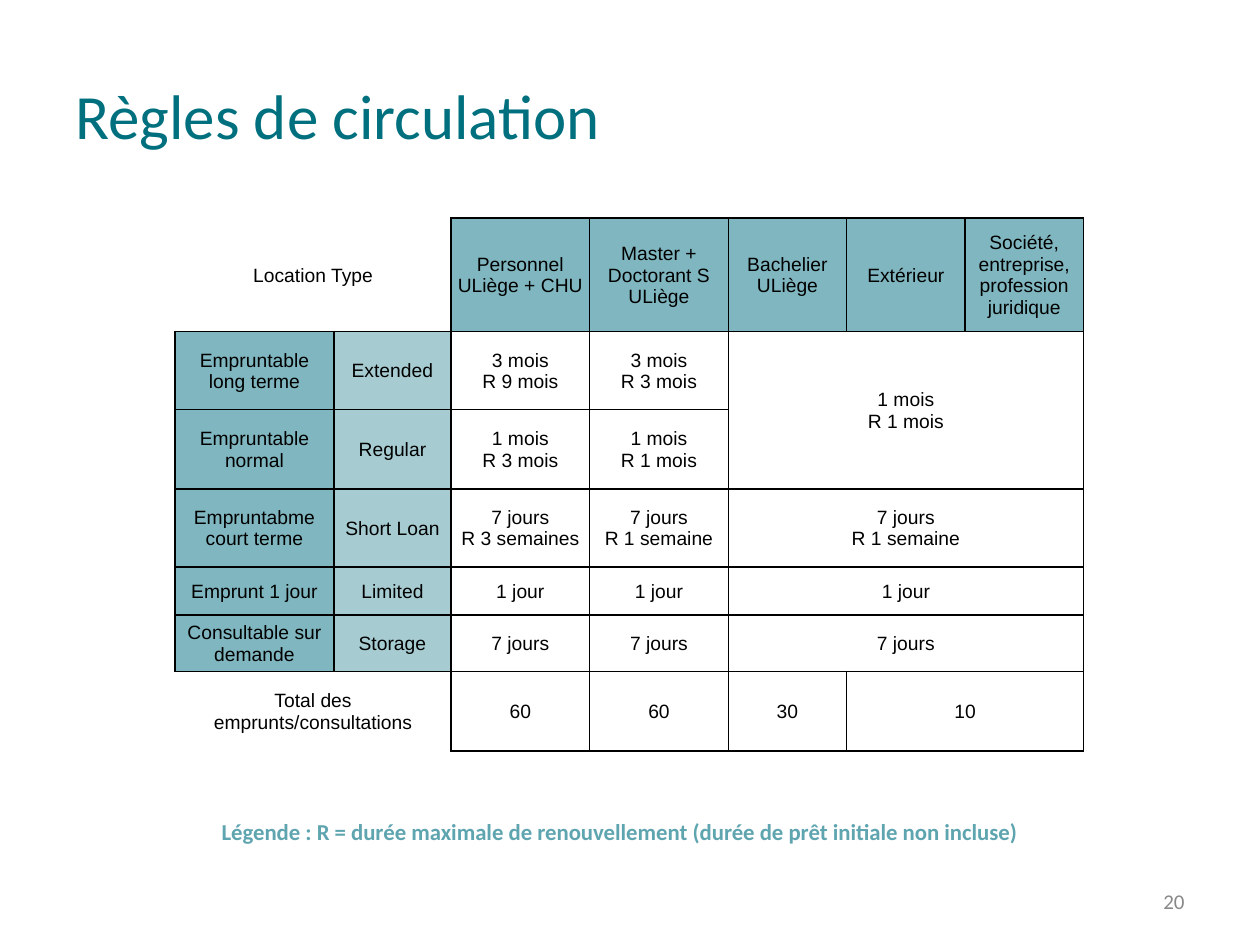
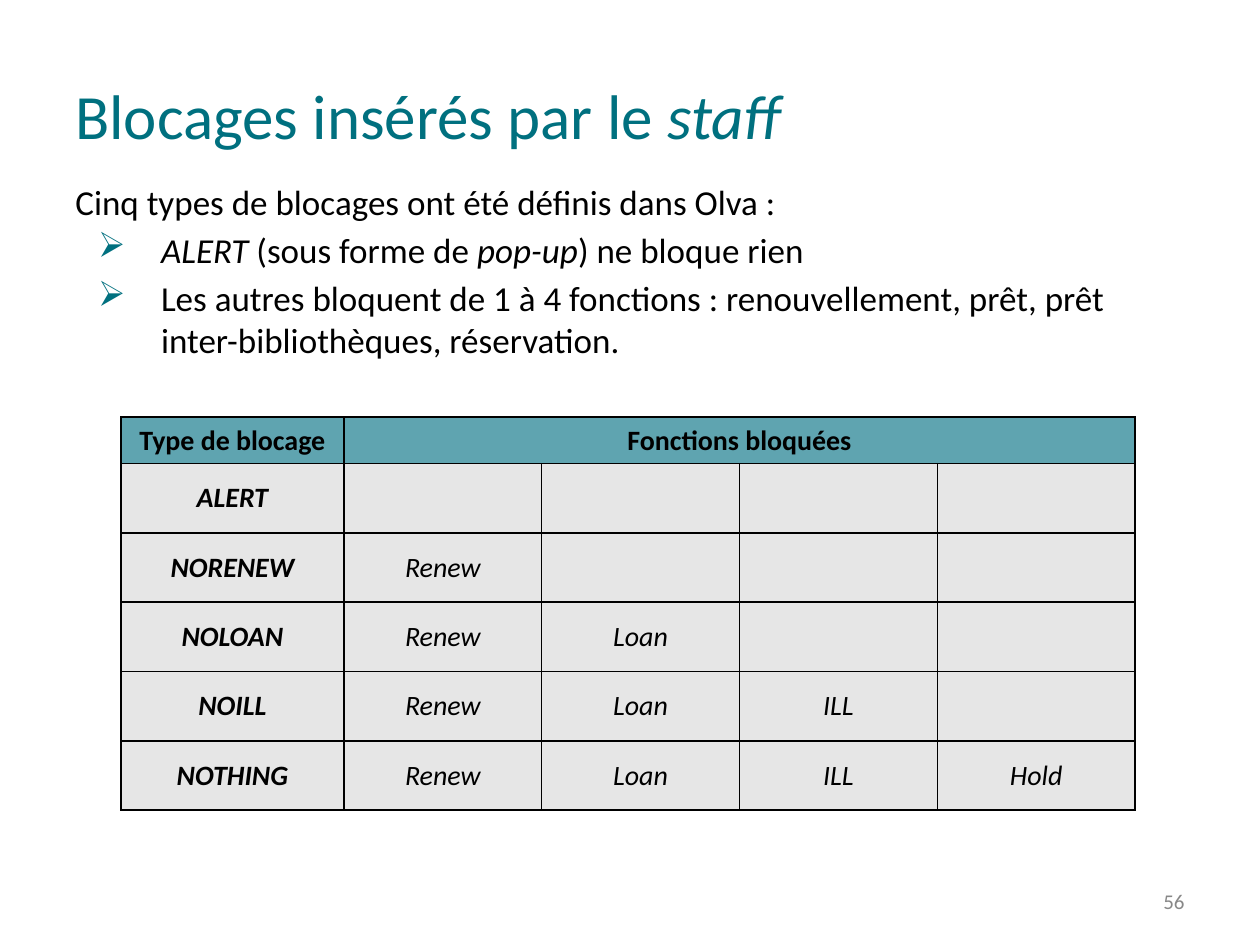
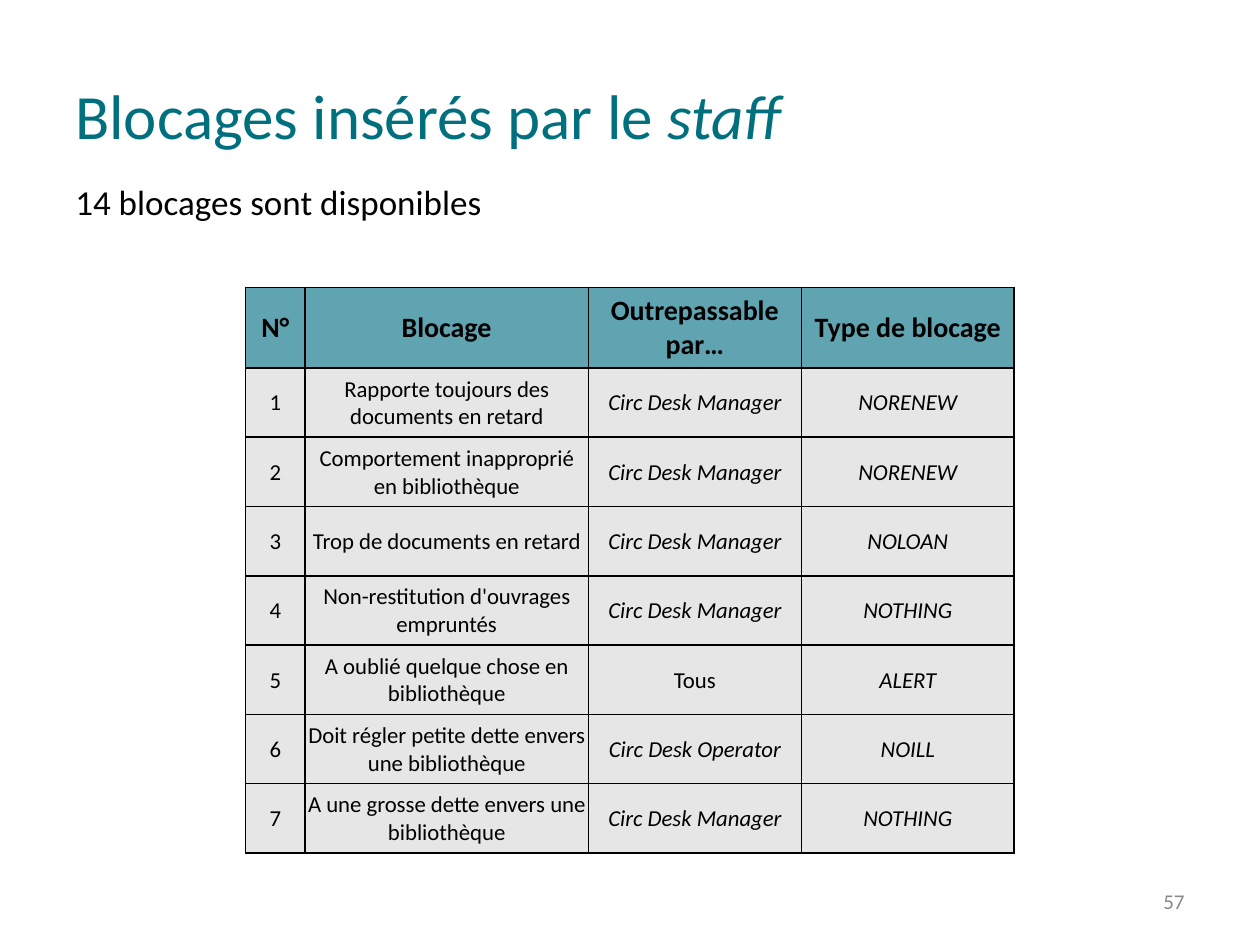
from lxml.etree import SubElement
from pptx import Presentation
from pptx.dml.color import RGBColor
from pptx.enum.text import MSO_ANCHOR, PP_ALIGN
from pptx.oxml.ns import qn
from pptx.util import Inches, Pt

COLORS = {
    "title": "00707F",
    "text": "000000",
    "number": "888888",
    "legend": "5FA5B0",
    "header": "5FA4B0",
    "body": "E6E6E6",
    "group": "7FB6BF",
    "type": "A6CCD2",
}
TITLE = {"size": Pt(36), "name": "Calibri"}
BODY = {"size": Pt(20), "name": "Calibri"}
NUMBER = {"size": Pt(12), "name": "Calibri"}
LEGEND = {"size": Pt(13), "name": "Calibri", "bold": True}
RULES = {"size": Pt(11), "name": "Arial"}
HEADING = {"size": Pt(16), "name": "Calibri", "bold": True}
FUNCTION = {"size": Pt(16), "name": "Calibri", "bold": False}
BLOCK = {"size": Pt(13), "name": "Calibri", "bold": False}

WIDE_INSETS = (0.1, 0.05, 0.1, 0.05)
TIGHT_INSETS = (0.01, 0.01, 0.01, 0)

STAFF_TITLE = "Blocages insérés par le *staff*"
TITLE_BOX = (0.5, 0.57, 9, 0.68)
BODY_BOX = (0.5, 1.38, 9, 5.32)
NUMBER_BOX = (7.17, 6.95, 2.33, 0.4)

CIRCULATION = [
    ["Location Type", None, "Personnel\nULiège + CHU", "Master +\nDoctorant S\nULiège",
     "Bachelier\nULiège", "Extérieur", "Société,\nentreprise,\nprofession\njuridique"],
    ["Empruntable\nlong terme", "Extended", "3 mois\nR 9 mois", "3 mois\nR 3 mois",
     "1 mois\nR 1 mois", None, None],
    ["Empruntable\nnormal", "Regular", "1 mois\nR 3 mois", "1 mois\nR 1 mois", None, None, None],
    ["Empruntabme\ncourt terme", "Short Loan", "7 jours\nR 3 semaines", "7 jours\nR 1 semaine",
     "7 jours\nR 1 semaine", None, None],
    ["Emprunt 1 jour", "Limited", "1 jour", "1 jour", "1 jour", None, None],
    ["Consultable sur\ndemande", "Storage", "7 jours", "7 jours", "7 jours", None, None],
    ["Total des\nemprunts/consultations", None, "60", "60", "30", "10", None],
]
CIRCULATION_SPANS = {(0, 0): (1, 2), (1, 4): (2, 3), (3, 4): (1, 3), (4, 4): (1, 3),
                     (5, 4): (1, 3), (6, 0): (1, 2), (6, 5): (1, 2)}
BLOCK_TYPES = ["ALERT", "NORENEW", "NOLOAN", "NOILL", "NOTHING"]
FUNCTIONS = ["Renew", "Loan", "ILL", "Hold"]
STAFF_BLOCKS = [
    ("Rapporte toujours des documents en retard", "*Circ Desk Manager*", "NORENEW"),
    ("Comportement inapproprié en bibliothèque", "*Circ Desk Manager*", "NORENEW"),
    ("Trop de documents en retard", "*Circ Desk Manager*", "NOLOAN"),
    ("Non-restitution d'ouvrages empruntés", "*Circ Desk Manager*", "NOTHING"),
    ("A oublié quelque chose en bibliothèque", "Tous", "ALERT"),
    ("Doit régler petite dette envers une bibliothèque", "*Circ Desk Operator*", "NOILL"),
    ("A une grosse dette envers une bibliothèque", "*Circ Desk Manager*", "NOTHING"),
]


def apply(target, values):
    for attribute, value in values.items():
        setattr(target, attribute, value)


def write(paragraph, text, style, color="text"):
    for index, piece in enumerate(text.split("*")):
        for line_index, line in enumerate(piece.split("\n")):
            if line_index:
                paragraph.add_line_break()
                line_break = paragraph._p.findall(qn("a:br"))[-1]
                SubElement(line_break, qn("a:rPr"), sz=str(int(style["size"].pt * 100)))
            if line:
                run = paragraph.add_run()
                run.text = line
                apply(run.font, {**style, "italic": index % 2 == 1})
                run.font.color.rgb = RGBColor.from_string(COLORS[color])


def margins(insets):
    sides = ("margin_left", "margin_top", "margin_right", "margin_bottom")
    return {side: Inches(inset) for side, inset in zip(sides, insets)}


def add_frame(slide, box, anchor=MSO_ANCHOR.TOP):
    frame = slide.shapes.add_textbox(*map(Inches, box)).text_frame
    apply(frame, {"word_wrap": True, "vertical_anchor": anchor, **margins(WIDE_INSETS)})
    return frame


def add_line(slide, box, text, style, color, anchor=MSO_ANCHOR.TOP, align=PP_ALIGN.LEFT):
    paragraph = add_frame(slide, box, anchor).paragraphs[0]
    paragraph.alignment = align
    write(paragraph, text, style, color)


def add_body(slide, box, intro, points=()):
    frame = add_frame(slide, box)
    write(frame.paragraphs[0], intro, BODY)
    for point in points:
        paragraph = frame.add_paragraph()
        paragraph.space_before = Pt(3.6)
        properties = paragraph._p.get_or_add_pPr()
        properties.set("marL", str(Inches(0.68)))
        properties.set("indent", str(Inches(-0.5)))
        bullet_color = SubElement(properties, qn("a:buClr"))
        SubElement(bullet_color, qn("a:srgbClr"), val=COLORS["title"])
        SubElement(properties, qn("a:buFont"), typeface="Wingdings", pitchFamily="2", charset="2")
        SubElement(properties, qn("a:buChar"), char="Ø")
        write(paragraph, point, BODY)


def set_borders(cell, open_sides):
    properties = cell._tc.get_or_add_tcPr()
    for side in "LRTB":
        border = SubElement(properties, qn(f"a:ln{side}"), w=str(Pt(1)))
        if side in open_sides:
            SubElement(border, qn("a:noFill"))
        else:
            fill = SubElement(border, qn("a:solidFill"))
            SubElement(fill, qn("a:srgbClr"), val=COLORS["text"])


def add_grid(slide, corner, widths, heights, texts, look, spans={}, open_sides={}):
    box = (*corner, sum(widths), sum(heights))
    grid = slide.shapes.add_table(len(heights), len(widths), *map(Inches, box)).table
    apply(grid, {"first_row": False, "horz_banding": False})
    for column, width in zip(grid.columns, widths):
        column.width = Inches(width)
    for row, height in zip(grid.rows, heights):
        row.height = Inches(height)
    for (row, column), (tall, wide) in spans.items():
        grid.cell(row, column).merge(grid.cell(row + tall - 1, column + wide - 1))
    for row, line in enumerate(texts):
        for column, text in enumerate(line):
            cell = grid.cell(row, column)
            fill, style, insets = look(row, column)
            set_borders(cell, open_sides.get((row, column), ""))
            if fill:
                cell.fill.solid()
                cell.fill.fore_color.rgb = RGBColor.from_string(COLORS[fill])
            else:
                cell.fill.background()
            apply(cell, {"vertical_anchor": MSO_ANCHOR.MIDDLE, **margins(insets)})
            if text:
                paragraph = cell.text_frame.paragraphs[0]
                paragraph.alignment = PP_ALIGN.CENTER
                write(paragraph, text, style)


def circulation_look(row, column):
    fill = None
    if row == 0 and column > 1 or 0 < row < 6 and column == 0:
        fill = "group"
    elif 0 < row < 6 and column == 1:
        fill = "type"
    return fill, RULES, TIGHT_INSETS


def functions_look(row, column):
    style = HEADING if row == 0 or column == 0 else FUNCTION
    return "body" if row else "header", style, WIDE_INSETS


def staff_blocks_look(row, column):
    return ("body", BLOCK, TIGHT_INSETS) if row else ("header", HEADING, WIDE_INSETS)


def add_page(deck, title, number):
    slide = deck.slides.add_slide(deck.slide_layouts[6])
    add_line(slide, TITLE_BOX, title, TITLE, "title", MSO_ANCHOR.MIDDLE)
    add_line(slide, NUMBER_BOX, str(number), NUMBER, "number", MSO_ANCHOR.MIDDLE, PP_ALIGN.RIGHT)
    return slide


def circulation_slide(deck):
    slide = add_page(deck, "Règles de circulation", 20)
    add_line(slide, (1.66, 6.44, 6.69, 0.34),
             "Légende : R = durée maximale de renouvellement (durée de prêt initiale non incluse)",
             LEGEND, "legend")
    add_grid(slide, (1.39, 1.73), [1.26, 0.93, 1.1, 1.1] + [0.94] * 3,
             [0.9, 0.62, 0.63, 0.62, 0.38, 0.45, 0.63], CIRCULATION, circulation_look,
             CIRCULATION_SPANS, {(0, 0): "LT", (6, 0): "LB"})


def functions_slide(deck):
    slide = add_page(deck, STAFF_TITLE, 56)
    add_body(slide, BODY_BOX, "Cinq types de blocages ont été définis dans Olva :", [
        "*ALERT* (sous forme de *pop-up*) ne bloque rien",
        "Les autres bloquent de 1 à 4 fonctions : renouvellement, prêt, prêt "
        "inter-bibliothèques, réservation.",
    ])
    texts = [["Type de blocage", "Fonctions bloquées", None, None, None]]
    for blocked, name in enumerate(BLOCK_TYPES):
        names = [name] + FUNCTIONS[:blocked]
        texts.append([f"*{text}*" for text in names] + [None] * (len(FUNCTIONS) - blocked))
    add_grid(slide, (0.96, 3.31), [1.77] + [1.57] * 4, [0.37] + [0.55] * 5,
             texts, functions_look, {(0, 1): (1, 4)})


def staff_blocks_slide(deck):
    slide = add_page(deck, STAFF_TITLE, 57)
    add_body(slide, BODY_BOX, "14 blocages sont disponibles")
    texts = [["N°", "Blocage", "Outrepassable par…", "Type de blocage"]]
    for number, (reason, role, block_type) in enumerate(STAFF_BLOCKS, 1):
        texts.append([str(number), reason, role, f"*{block_type}*"])
    add_grid(slide, (1.95, 2.28), [0.47, 2.25, 1.69, 1.69], [0.64] + [0.55] * 7,
             texts, staff_blocks_look)


def main():
    deck = Presentation()
    deck.slide_width, deck.slide_height = Inches(10), Inches(7.5)
    circulation_slide(deck)
    functions_slide(deck)
    staff_blocks_slide(deck)
    deck.save("out.pptx")


if __name__ == "__main__":
    main()
